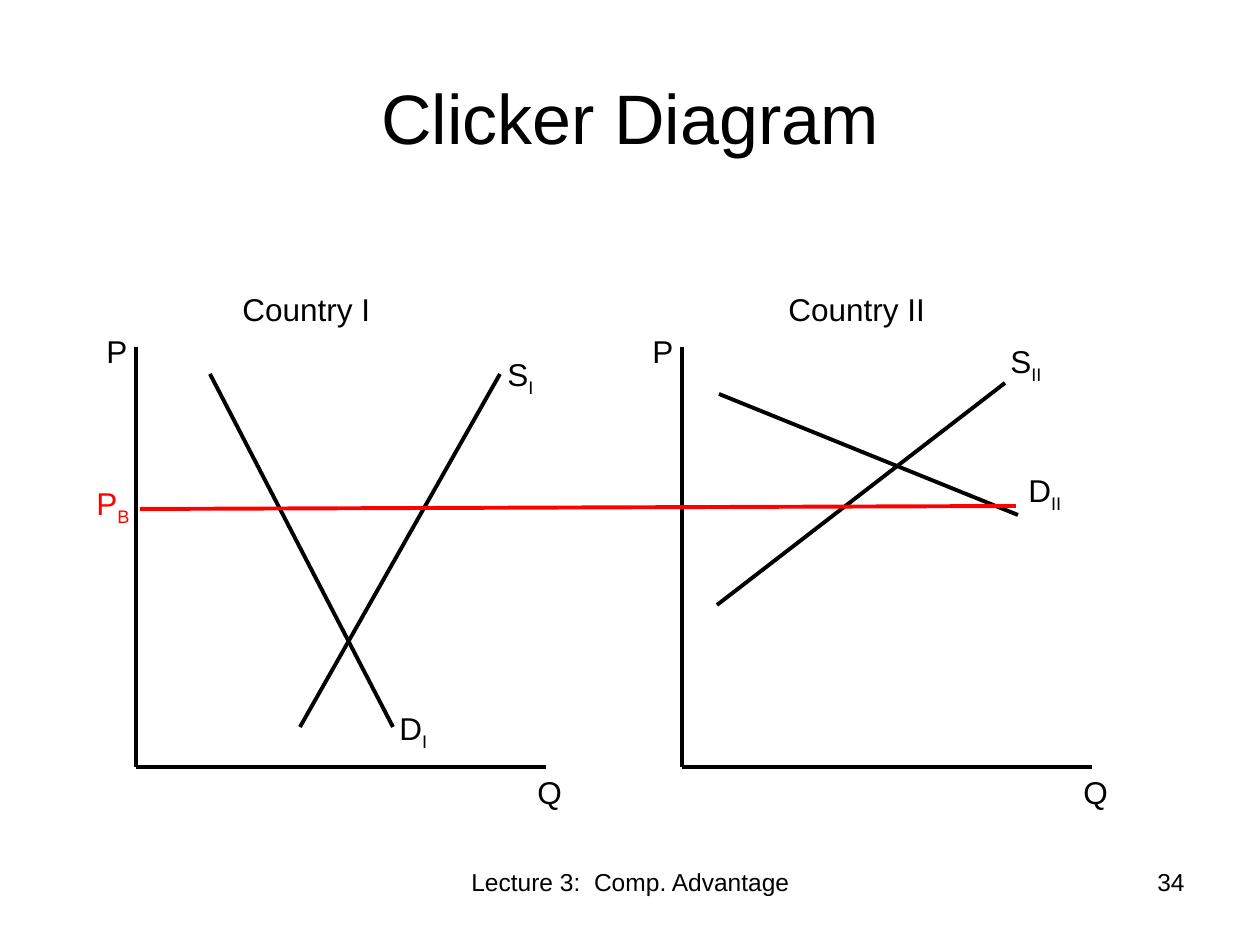
import pptx
import pptx.dml.color
import pptx.enum.shapes
import pptx.enum.text
import pptx.oxml.ns
import pptx.util
from lxml import etree

EMU_PER_PX = 914400 / 126
FONT = "Arial"
COLORS = {"ink": "000000", "price": "FF0000", "background": "FFFFFF"}
ALIGN = pptx.enum.text.PP_ALIGN
ANCHOR = pptx.enum.text.MSO_ANCHOR
LABEL_HEIGHT = 50
LABEL_WIDTH = 63


def px(length):
    return pptx.util.Emu(round(length * EMU_PER_PX))


def color(name):
    return pptx.dml.color.RGBColor.from_string(COLORS[name])


def add_text(slide, box, text, size=18, ink="ink", align=ALIGN.LEFT,
             anchor=ANCHOR.TOP, subscript=""):
    """Add one line of text, with an optional subscript run at its end."""
    shape = slide.shapes.add_textbox(*map(px, box))
    frame = shape.text_frame
    frame.word_wrap = True
    frame.vertical_anchor = anchor
    frame.text = text
    paragraph = frame.paragraphs[0]
    paragraph.alignment = align
    if subscript:
        run = paragraph.add_run()
        run.text = subscript
        run.font._element.set("baseline", "-25000")
    for run in paragraph.runs:
        run.font.name = FONT
        run.font.size = pptx.util.Pt(size)
        run.font.color.rgb = color(ink)


def add_line(slide, start, end, ink="ink"):
    line = slide.shapes.add_connector(
        pptx.enum.shapes.MSO_CONNECTOR.STRAIGHT, *map(px, (*start, *end)))
    line.line.color.rgb = color(ink)
    line.line.width = pptx.util.Pt(2.25)
    properties = line._element.spPr
    etree.SubElement(properties, pptx.oxml.ns.qn("a:effectLst"))


def add_market(slide, left, top, country, curves):
    """Draw one country's axes and its curves; curve points are relative to the box."""
    def place(point):
        return left + point[0], top + point[1]

    origin = (42, 483)
    for axis_end in ((42, 63), (452, 483)):
        add_line(slide, place(origin), place(axis_end))
    add_text(slide, (*place((136, 0)), 210, LABEL_HEIGHT), f"Country {country}")
    for name, point in (("P", (0, 42)), ("Q", (431, 483))):
        add_text(slide, (*place(point), LABEL_WIDTH, LABEL_HEIGHT), name)
    for name, start, end, label in curves:
        add_line(slide, place(start), place(end))
        add_text(slide, (*place(label), LABEL_WIDTH, LABEL_HEIGHT), name,
                 subscript=country)


def add_price_line(slide, left, top):
    add_line(slide, (left + 56, top + 31), (left + 932, top + 28), "price")
    add_text(slide, (left, top, LABEL_WIDTH, LABEL_HEIGHT), "P",
             ink="price", subscript="B")


def add_footer(slide, top, height):
    add_text(slide, (431, top, 399, height), "Lecture 3:  Comp. Advantage",
             size=14, align=ALIGN.CENTER)
    add_text(slide, (903, top, 294, height), "34", size=14, align=ALIGN.RIGHT)


def main():
    presentation = pptx.Presentation()
    presentation.slide_width = px(1260)
    presentation.slide_height = px(945)
    slide = presentation.slides.add_slide(presentation.slide_layouts[6])
    slide.background.fill.solid()
    slide.background.fill.fore_color.rgb = color("background")

    add_text(slide, (63, 38, 1134, 158), "Clicker Diagram", size=40,
             align=ALIGN.CENTER, anchor=ANCHOR.MIDDLE)
    markets = {
        "I": [("D", (116, 90), (299, 443), (293, 419)),
              ("S", (206, 443), (406, 90), (401, 65))],
        "II": [("D", (79, 110), (378, 231), (376, 181)),
               ("S", (77, 321), (365, 99), (358, 52))],
    }
    for index, (country, curves) in enumerate(markets.items()):
        add_market(slide, 94 + 546 * index, 284, country, curves)
    add_price_line(slide, 84, 478)
    add_footer(slide, 861, 66)
    presentation.save("out.pptx")


if __name__ == "__main__":
    main()
